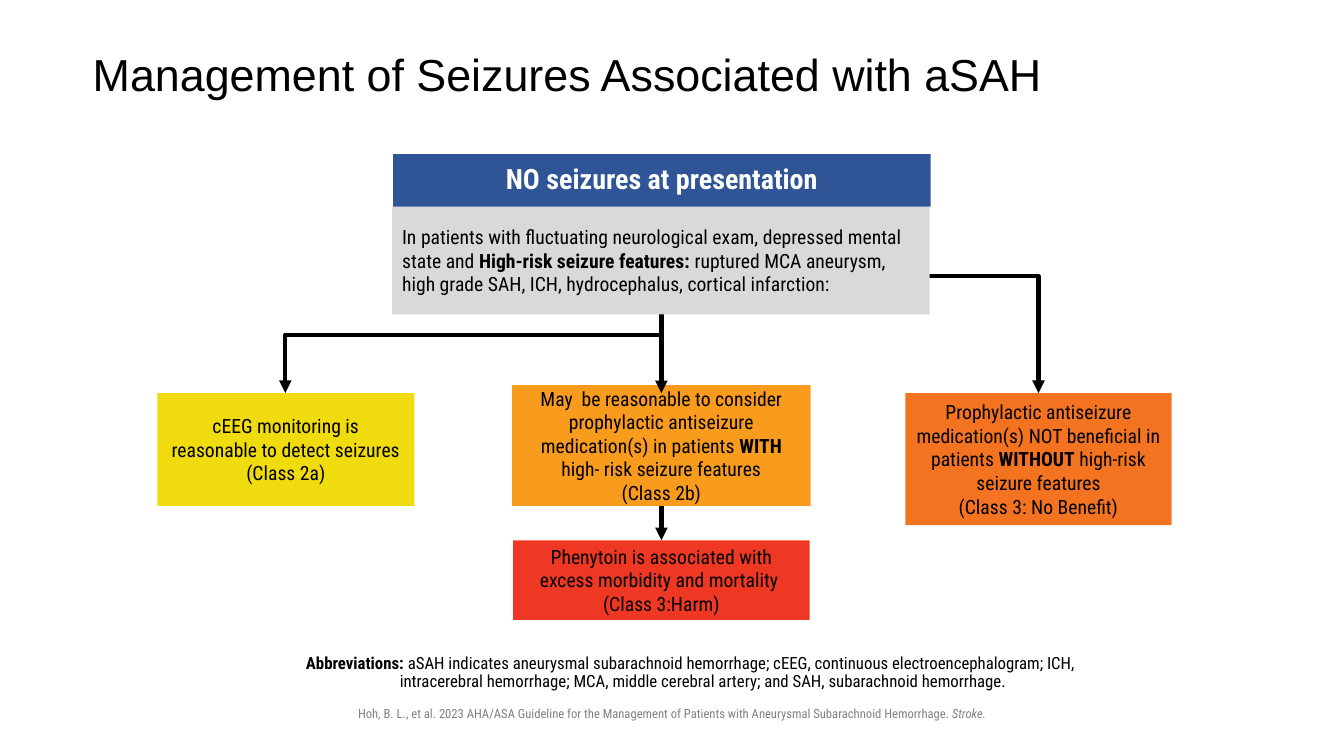
import pptx
import pptx.util
import pptx.dml.color
import pptx.enum.shapes
import pptx.enum.text
import pptx.oxml.ns
from lxml import etree

# Grid: ten columns or rows to the inch; places are (left, top, width, height)
COLS, ROWS, CELL = 133.3, 75, 914400 // 10
SPINE, FORK = 65.6, 27.4

THEME = {
    "black": "000000", "white": "FFFFFF", "muted": "808080",
    "blue": "2F5597", "grey": "D9D9D9", "yellow": "F0DB0E",
    "amber": "F99B1D", "orange": "F47320", "red": "EE3823",
    "head": "Arial", "body": "Roboto Condensed",
    "title": 32, "banner": 20, "box": 14, "note": 12, "cite": 9, "line": 3,
}

# Text: paragraphs of (words, style) runs; style is "", "b" or "i"
TEXTS = {
    "title": dict(
        at=(9.2, 4, 115, 7.2), size="title", font="head", align="LEFT",
        inset=(0, 0, 0, 0), lead=0.9,
        text=[[("Management of Seizures Associated with aSAH", "")]]),
    "note": dict(
        at=(26.1, 64.5, 85.8, 4.5), size="note", anchor="TOP",
        inset=(0, 0.5, 1, 0.5), lead=0.9, hang=2.5,
        text=[[("Abbreviations: ", "b"),
               ("aSAH indicates aneurysmal subarachnoid hemorrhage; cEEG, continuous "
                "electroencephalogram; ICH, intracerebral hemorrhage; MCA, middle cerebral "
                "artery; and SAH, subarachnoid hemorrhage.", "")]]),
    "cite": dict(
        at=(29.4, 69.5, 74.5, 2.5), size="cite", color="muted", anchor="TOP",
        text=[[("Hoh, B. L., et al. 2023 AHA/ASA Guideline for the Management of Patients "
                "with Aneurysmal Subarachnoid Hemorrhage. ", ""), ("Stroke.", "i")]]),
}
ADVICE = {
    "monitor": dict(
        at=(15.6, 39, 25.5, 11.2), fill="yellow",
        text=[[("cEEG monitoring is", "")],
              [("reasonable to detect seizures\v(Class 2a)", "")]]),
    "without": dict(
        at=(89.8, 39, 26.4, 13.1), fill="orange",
        text=[[("Prophylactic antiseizure medication(s) NOT beneficial in patients ", ""),
               ("WITHOUT", "b"), (" high-risk seizure features", "")],
              [("(Class 3: No Benefit)", "")]]),
    "with": dict(
        at=(50.8, 38.2, 29.6, 12), fill="amber",
        text=[[("May  be reasonable to consider prophylactic antiseizure "
                "medication(s) in patients ", ""),
               ("WITH", "b"), (" high- risk seizure features", "")],
              [("(Class 2b)", "")]]),
    "harm": dict(
        at=(50.9, 53.6, 29.4, 7.9), fill="red",
        text=[[("Phenytoin is associated with excess morbidity and mortality "
                "\v(Class 3:Harm)", "")]]),
}
START = {
    "features": dict(
        at=(38.9, 20.5, 53.3, 10.7), fill="grey", align="LEFT",
        text=[[("In patients with fluctuating neurological exam, depressed mental state and ", ""),
               ("High-risk seizure features:", "b"),
               (" ruptured MCA aneurysm, high grade SAH, ICH, hydrocephalus, "
                "cortical infarction:", "")]]),
    "banner": dict(
        at=(39, 15.3, 53.3, 5.2), fill="blue", color="white", size="banner",
        inset=(0, 0, 0, 0), lead=0.9,
        text=[[("NO seizures at presentation", "b")]]),
}


def grid(*cells):
    return [pptx.util.Emu(round(n * CELL)) for n in cells]


def tint(name):
    return pptx.dml.color.RGBColor.from_string(THEME[name])


def write(shape, text, size="box", font="body", color="black", align="CENTER",
          anchor="MIDDLE", inset=(1, 0.5, 1, 0.5), lead=None, hang=0):
    frame = shape.text_frame
    sides = ("margin_left", "margin_top", "margin_right", "margin_bottom")
    form = dict(zip(sides, grid(*inset)), word_wrap=True,
                vertical_anchor=getattr(pptx.enum.text.MSO_ANCHOR, anchor))
    for key, val in form.items():
        setattr(frame, key, val)
    for i, runs in enumerate(text):
        para = frame.add_paragraph() if i else frame.paragraphs[0]
        para.alignment = getattr(pptx.enum.text.PP_ALIGN, align)
        para.line_spacing = lead
        if hang:
            edge = grid(hang)[0]
            props = para._p.get_or_add_pPr()
            props.set("marL", str(edge))
            props.set("indent", str(-edge))
        for words, style in runs:
            # A vertical tab marks a line break inside a run
            for j, part in enumerate(words.split("\v")):
                if j:
                    para.add_line_break()
                run = para.add_run()
                run.text = part
                face = dict(name=THEME[font], size=pptx.util.Pt(THEME[size]),
                            bold=style == "b", italic=style == "i")
                for key, val in face.items():
                    setattr(run.font, key, val)
                run.font.color.rgb = tint(color)


def add_box(slide, at, fill, **rest):
    box = slide.shapes.add_shape(pptx.enum.shapes.MSO_SHAPE.RECTANGLE, *grid(*at))
    box.shadow.inherit = False
    box.fill.solid()
    box.fill.fore_color.rgb = tint(fill)
    box.line.fill.background()
    write(box, **rest)
    return box


def add_arrow(slide, start, end, kind="STRAIGHT"):
    link = slide.shapes.add_connector(
        getattr(pptx.enum.shapes.MSO_CONNECTOR, kind), *grid(*start, *end))
    link.line.color.rgb = tint("black")
    link.line.width = pptx.util.Pt(THEME["line"])
    name = pptx.oxml.ns.qn
    etree.SubElement(link.line._get_or_add_ln(), name("a:tailEnd"), type="triangle")
    etree.SubElement(link._element.spPr, name("a:effectLst"))
    return link


def add_corner(slide, start, end):
    """Arrow that runs across, then turns once and drops."""
    link = add_arrow(slide, start, end, "ELBOW")
    geom = link._element.spPr.find(pptx.oxml.ns.qn("a:prstGeom"))
    geom.set("prst", "bentConnector2")


def add_drop(slide, start, end):
    """Arrow that drops, runs left and drops again: an elbow turned a quarter."""
    (x1, y1), (x2, y2) = start, end
    midx, midy = (x1 + x2) / 2, (y1 + y2) / 2
    halfw, halfh = (y2 - y1) / 2, (x1 - x2) / 2
    link = add_arrow(slide, (midx - halfw, midy - halfh),
                     (midx + halfw, midy + halfh), "ELBOW")
    link._element.spPr.find(pptx.oxml.ns.qn("a:xfrm")).set("rot", str(90 * 60000))


def main():
    deck = pptx.Presentation()
    deck.slide_width, deck.slide_height = grid(COLS, ROWS)
    slide = deck.slides.add_slide(deck.slide_layouts[6])
    for item in TEXTS.values():
        rest = dict(item)
        write(slide.shapes.add_textbox(*grid(*rest.pop("at"))), **rest)

    boxes = {key: add_box(slide, **item) for key, item in ADVICE.items()}
    fork, base = (SPINE, FORK), ADVICE["monitor"]["at"][1]
    add_drop(slide, fork, (28.3, base))
    add_corner(slide, fork, (103, base))
    add_arrow(slide, fork, (SPINE, base))
    link = add_arrow(slide, fork, fork)
    link.begin_connect(boxes["with"], 2)
    link.end_connect(boxes["harm"], 0)

    for item in START.values():
        add_box(slide, **item)
    deck.save("out.pptx")


if __name__ == "__main__":
    main()
